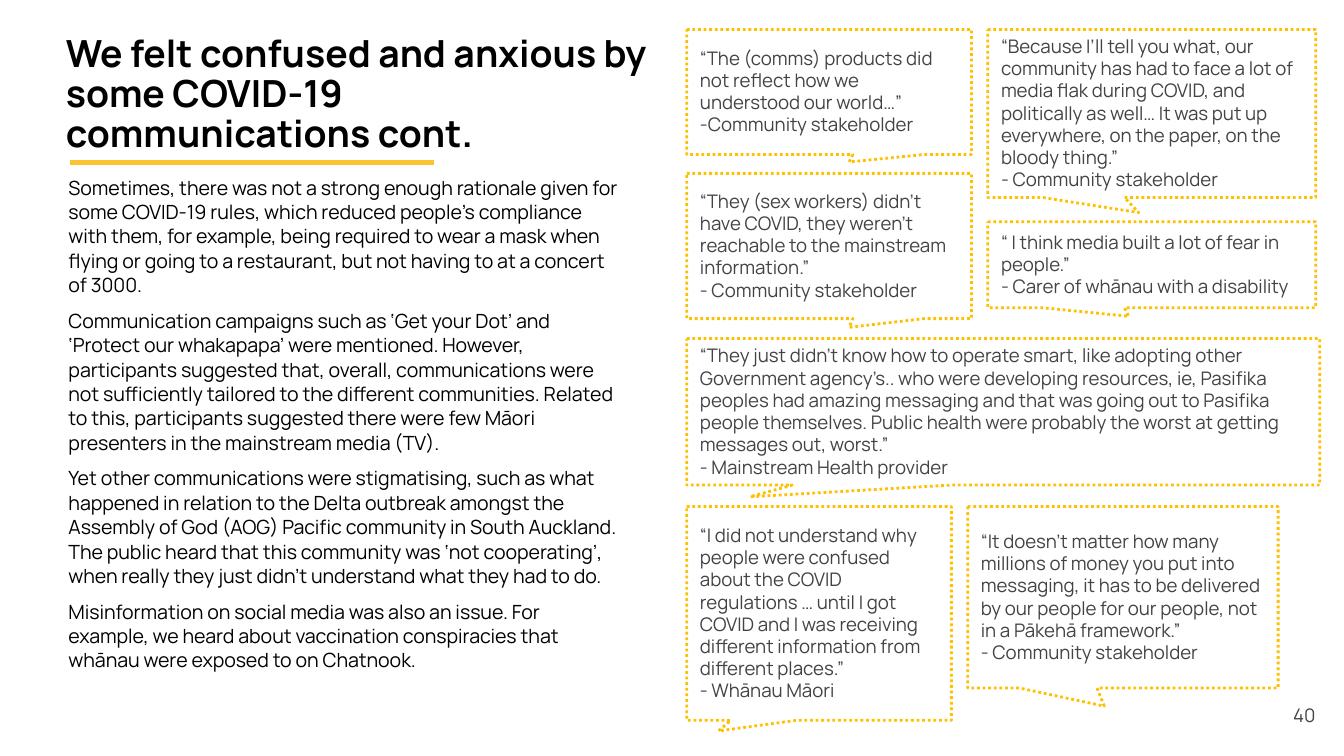
from pptx import Presentation
from pptx.dml.color import RGBColor
from pptx.enum.dml import MSO_LINE
from pptx.enum.shapes import MSO_CONNECTOR, MSO_SHAPE
from pptx.enum.text import MSO_ANCHOR, PP_ALIGN
from pptx.oxml.ns import qn
from pptx.util import Pt
from lxml import etree

FONT = "Manrope"
BLACK = RGBColor(0x00, 0x00, 0x00)
GREY = RGBColor(0x43, 0x43, 0x43)
WHITE = RGBColor(0xFF, 0xFF, 0xFF)
RULE_YELLOW = RGBColor(0xFA, 0xC3, 0x2F)
QUOTE_YELLOW = RGBColor(0xFF, 0xC0, 0x00)

DOTTED = MSO_LINE.ROUND_DOT
STRAIGHT = MSO_CONNECTOR.STRAIGHT
CALLOUT = MSO_SHAPE.RECTANGULAR_CALLOUT
TOP, MIDDLE, BOTTOM = MSO_ANCHOR.TOP, MSO_ANCHOR.MIDDLE, MSO_ANCHOR.BOTTOM
LEFT, CENTER = PP_ALIGN.LEFT, PP_ALIGN.CENTER

TITLE = "We felt confused and anxious by some COVID-19 communications cont."
FINDINGS = [
    "Sometimes, there was not a strong enough rationale given for some COVID-19 "
    "rules, which reduced people’s compliance with them, for example, being "
    "required to wear a mask when flying or going to a restaurant, but not having "
    "to at a concert of 3000.",
    "Communication campaigns such as ‘Get your Dot’ and ‘Protect our whakapapa’ "
    "were mentioned. However, participants suggested that, overall, communications "
    "were not sufficiently tailored to the different communities. Related to this, "
    "participants suggested there were few Māori presenters in the mainstream "
    "media (TV).",
    "Yet other communications were stigmatising, such as what happened in relation "
    "to the Delta outbreak amongst the Assembly of God (AOG) Pacific community in "
    "South Auckland. The public heard that this community was ‘not cooperating’, "
    "when really they just didn’t understand what they had to do.",
    "Misinformation on social media was also an issue. For example, we heard about "
    "vaccination conspiracies that whānau were exposed to on Chatnook.",
]

# Left edges of the quote columns, and the top of the last row
COLUMN_1, COLUMN_2 = 367.9, 529.2
LAST_ROW = 271.4

# Box (left, top, width, height), tail tip (x, y), quote, speaker
QUOTES = [
    ((COLUMN_1, 15.8, 152.6, 67), (0.07, 0.56),
     "“The (comms) products did not reflect how we understood our world…”",
     "-Community stakeholder"),
    ((COLUMN_2, 15.8, 175.7, 90), (-0.04, 0.59),
     "“Because I’ll tell you what, our community has had to face a lot of media "
     "flak during COVID, and politically as well… It was put up everywhere, on the "
     "paper, on the bloody thing.”",
     "- Community stakeholder"),
    ((COLUMN_2, 118.8, 175.7, 46.1), (-0.07, 0.6),
     "“ I think media built a lot of fear in people.”",
     "- Carer of whānau with a disability"),
    ((COLUMN_1, 92.9, 152.6, 77.8), (0.07, 0.56),
     "“They (sex workers) didn’t have COVID, they weren’t reachable to the "
     "mainstream information.”",
     "- Community stakeholder"),
    ((COLUMN_1, 181.4, 339.1, 78.5), (-0.4, 0.58),
     "“They just didn’t know how to operate smart, like adopting other Government "
     "agency’s.. who were developing resources, ie, Pasifika peoples had amazing "
     "messaging and that was going out to Pasifika people themselves. Public health "
     "were probably the worst at getting messages out, worst.”",
     "- Mainstream Health provider"),
    ((COLUMN_1, LAST_ROW, 141.8, 114.5), (-0.38, 0.55),
     "“I did not understand why people were confused about the COVID regulations … "
     "until I got COVID and I was receiving different information from different "
     "places.”",
     "- Whānau Māori"),
    ((518.4, LAST_ROW, 166.3, 97.2), (-0.06, 0.6),
     "“It doesn’t matter how many millions of money you put into messaging, it has "
     "to be delivered by our people for our people, not in a Pākehā framework.”",
     "- Community stakeholder"),
]


def write(shape, paragraphs, size, color, anchor=TOP, inset=0, spacing=1.0,
          before=0, bold=False, align=LEFT):
    frame = shape.text_frame
    frame.word_wrap = True
    frame.vertical_anchor = anchor
    frame.margin_left = frame.margin_right = Pt(inset)
    frame.margin_top = frame.margin_bottom = Pt(inset)
    frame.text = "\n".join(paragraphs)
    for paragraph in frame.paragraphs:
        paragraph.alignment = align
        paragraph.line_spacing = spacing
        paragraph.space_before = Pt(before)
        paragraph.font.name = FONT
        paragraph.font.size = Pt(size)
        paragraph.font.bold = bold
        paragraph.font.color.rgb = color


def add_text(slide, box, paragraphs, size, color, **style):
    textbox = slide.shapes.add_textbox(*map(Pt, box))
    write(textbox, paragraphs, size, color, **style)


def add_rule(slide, left, right, y):
    rule = slide.shapes.add_connector(STRAIGHT, Pt(left), Pt(y), Pt(right), Pt(y))
    rule.line.color.rgb = RULE_YELLOW
    rule.line.width = Pt(3)
    etree.SubElement(rule._element.spPr, qn("a:effectLst"))


def add_quote(slide, box, tail, quote, speaker):
    bubble = slide.shapes.add_shape(CALLOUT, *map(Pt, box))
    bubble.adjustments[0], bubble.adjustments[1] = tail
    bubble.shadow.inherit = False
    bubble.fill.solid()
    bubble.fill.fore_color.rgb = WHITE
    bubble.line.color.rgb = QUOTE_YELLOW
    bubble.line.width = Pt(1.5)
    bubble.line.dash_style = DOTTED
    write(bubble, [quote, speaker], 10, GREY, anchor=MIDDLE, inset=7.2, spacing=0.99)


def main():
    prs = Presentation()
    prs.slide_width, prs.slide_height = Pt(720), Pt(405)
    slide = prs.slides.add_slide(prs.slide_layouts[6])

    # Title and underline
    add_text(slide, (35.3, 26.6, 311.8, 56.9), [TITLE], 20, BLACK,
             anchor=BOTTOM, spacing=0.9, bold=True)
    add_rule(slide, 37.4, 232.6, 87.1)

    # Findings
    add_text(slide, (36.7, 93.6, 297.4, 295.2), FINDINGS, 10.5, BLACK,
             spacing=1.04, before=6)

    # Quotes
    for quote in QUOTES:
        add_quote(slide, *quote)

    # Page number
    add_text(slide, (677.5, 361.4, 42.5, 43.2), ["40"], 10, GREY,
             anchor=MIDDLE, inset=7.2, align=CENTER)

    prs.save("out.pptx")


if __name__ == "__main__":
    main()
